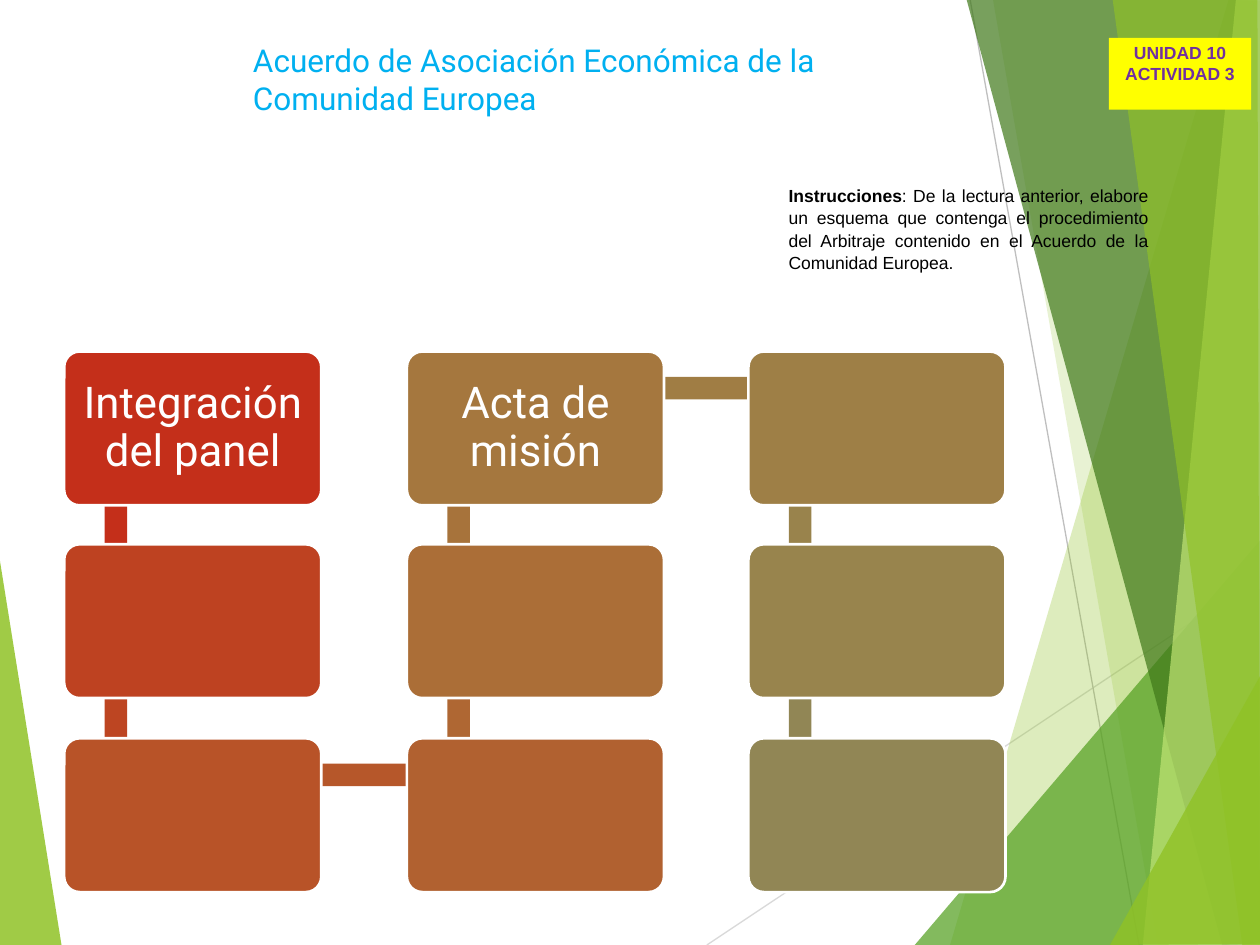
from lxml.etree import SubElement
from pptx import Presentation
from pptx.dml.color import RGBColor
from pptx.enum.shapes import MSO_CONNECTOR, MSO_SHAPE
from pptx.enum.text import MSO_ANCHOR, PP_ALIGN
from pptx.oxml.ns import qn
from pptx.util import Inches, Pt


def rgb(value):
    return RGBColor.from_string(value)


def add_block(kind, x, y, w, h, color):
    """Add a filled preset shape without outline or shadow."""
    sp = s.shapes.add_shape(kind, Inches(x), Inches(y), Inches(w), Inches(h))
    sp.shadow.inherit = False
    sp.fill.solid()
    sp.fill.fore_color.rgb = rgb(color)
    sp.line.fill.background()
    return sp


prs = Presentation()
prs.slide_width, prs.slide_height = Inches(10), Inches(7.5)
s = prs.slides.add_slide(prs.slide_layouts[6])

# Background: thin lines and translucent facets (colour, opacity %, corners)
lines = [((5.61, 7.5), (10.01, 4.57), "D9D9D9"), ((7.7, 0), (9.04, 7.5), "BFBFBF")]
facets = [
    ("90C226", 85, [(-0.01, 4.39), (0.49, 7.51), (-0.01, 7.5)]),
    ("90C226", 30, [(9.75, 0), (7.54, 7.5), (10.02, 7.51), (10.01, 0.01)]),
    ("90C226", 20, [(7.88, -0.01), (9.19, 7.5), (10.01, 7.5), (10.01, -0.01)]),
    ("54A021", 72, [(7.26, 7.5), (10, 4.29), (10.01, 7.5)]),
    ("3F7819", 70, [(7.67, -0.01), (9.7, 7.5), (10.01, 7.49), (10.01, -0.01)]),
    ("C0E474", 70, [(9.81, -0.01), (9.07, 7.5), (10.01, 7.5), (10, -0.01)]),
    ("90C226", 65, [(8.83, -0.01), (9.86, 7.5), (10, 7.5), (9.98, -0.01)]),
    ("90C226", 80, [(8.81, 7.5), (10.01, 5.35), (10.01, 7.49)]),
]

for i, (color, opacity, corners) in enumerate(facets):
    points = [(Inches(x), Inches(y)) for x, y in corners]
    builder = s.shapes.build_freeform(*points[0])
    builder.add_line_segments(points[1:], close=True)
    sp = builder.convert_to_shape()
    sp.shadow.inherit = False
    sp.fill.solid()
    sp.fill.fore_color.rgb = rgb(color)
    sp.line.fill.background()
    clr = sp._element.spPr.find(qn("a:solidFill"))[0]
    SubElement(clr, qn("a:alpha")).set("val", str(opacity * 1000))
    if i == 0:  # the lines lie between the left and the right facets
        for (x1, y1), (x2, y2), line_color in lines:
            ln = s.shapes.add_connector(MSO_CONNECTOR.STRAIGHT, Inches(x1),
                                        Inches(y1), Inches(x2), Inches(y2))
            ln.line.color.rgb = rgb(line_color)
            ln.line.width = Pt(0.75)
            SubElement(ln._element.spPr, qn("a:effectLst"))

# Snaking process: down, up, down; each step has a bar leading to the next
cols = [0.51, 3.23, 5.94]
rows = [2.79, 4.32, 5.86]
box_w, box_h, bar = 2.04, 1.22, 0.18
down_len, across_len = 1.52, 2.7
steps = [
    (0, 0, "C42F1A", "C42F1A", "Integración del panel"),
    (0, 1, "BE4221", "BD4522", ""),
    (0, 2, "B85328", "B6572A", ""),
    (1, 2, "B16130", "AF6733", ""),
    (1, 1, "AB6E37", "A7733B", ""),
    (1, 0, "A5773E", "A07D44", "Acta de misión"),
    (2, 0, "9E7F46", "99834C", ""),
    (2, 1, "98844D", "918655", ""),
    (2, 2, "918655", None, ""),
]

for i, (col, row, color, bar_color, label) in enumerate(steps):
    x, y = cols[col], rows[row]
    if bar_color:
        next_col, next_row = steps[i + 1][:2]
        if next_col != col:
            add_block(MSO_SHAPE.RECTANGLE, x + 0.42, y + 0.2, across_len, bar, bar_color)
        else:
            mid_y = rows[min(row, next_row)] + 1.07
            sp = add_block(MSO_SHAPE.RECTANGLE, x + 0.41 - down_len / 2,
                           mid_y - bar / 2, down_len, bar, bar_color)
            sp.rotation = 90 if next_row > row else 270
    sp = add_block(MSO_SHAPE.ROUNDED_RECTANGLE, x, y, box_w, box_h, color)
    sp.adjustments[0] = 0.1
    sp.line.color.rgb = rgb("FFFFFF")
    sp.line.width = Pt(1.5)
    if label:
        tf = sp.text_frame
        tf.word_wrap = True
        tf.margin_left = tf.margin_right = Inches(0.05)
        p = tf.paragraphs[0]
        p.text = label
        p.alignment = PP_ALIGN.CENTER
        p.line_spacing = 0.9
        p.font.size, p.font.name = Pt(25), "Roboto"
        p.font.color.rgb = rgb("FFFFFF")

# Unit tag
sp = add_block(MSO_SHAPE.RECTANGLE, 8.8, 0.3, 1.13, 0.57, "FFFF00")
tf = sp.text_frame
tf.word_wrap = True
tf.vertical_anchor = MSO_ANCHOR.TOP
tf.margin_left = tf.margin_right = Inches(0.06)
tf.margin_top = tf.margin_bottom = Inches(0.03)
tf.text = "UNIDAD 10\nACTIVIDAD 3"
for p in tf.paragraphs:
    p.alignment = PP_ALIGN.CENTER
    p.font.size, p.font.name, p.font.bold = Pt(10), "Arial", True
    p.font.color.rgb = rgb("7030A0")

# Instructions
tf = s.shapes.add_textbox(Inches(6.12), Inches(1.41), Inches(3.09), Inches(0.81)).text_frame
tf.word_wrap = True
p = tf.paragraphs[0]
p.alignment = PP_ALIGN.JUSTIFY
p.line_spacing = 1.06
p._p.get_or_add_pPr().set("marL", str(Inches(0.04)))
p.font.size, p.font.name = Pt(10), "Arial"
p.font.color.rgb = rgb("000000")
r = p.add_run()
r.text = "Instrucciones"
r.font.bold = True
r = p.add_run()
r.text = (": De la lectura anterior, elabore un esquema que contenga el procedimiento "
          "del Arbitraje contenido en el Acuerdo de la Comunidad Europea.")

# Title
tf = s.shapes.add_textbox(Inches(1.91), Inches(0.28), Inches(5.63), Inches(0.71)).text_frame
tf.word_wrap = True
p = tf.paragraphs[0]
p.text = "Acuerdo de Asociación Económica de la Comunidad Europea"
p.font.size, p.font.name = Pt(18), "Roboto"
p.font.color.rgb = rgb("00B0F0")

prs.save("out.pptx")
